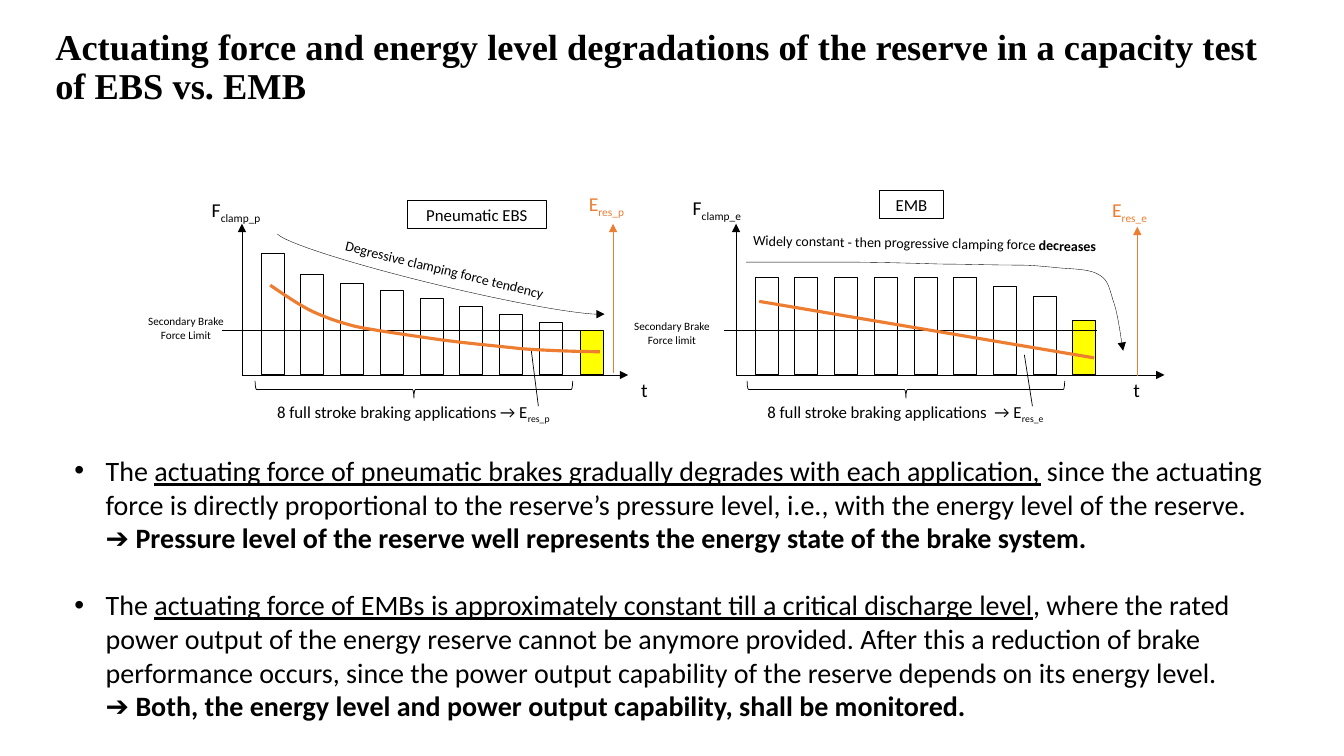
"""Builds the slide comparing reserve degradation of pneumatic EBS and EMB brakes."""
from lxml.etree import SubElement
from pptx import Presentation
from pptx.dml.color import RGBColor
from pptx.enum.shapes import MSO_CONNECTOR, MSO_SHAPE
from pptx.enum.text import PP_ALIGN
from pptx.oxml.ns import qn
from pptx.util import Pt

PX = 9144
COLORS = {"black": "000000", "white": "FFFFFF", "yellow": "FFFF00", "orange": "ED7D31"}

presentation = Presentation()
presentation.slide_width = 1333 * PX
presentation.slide_height = 750 * PX
slide = presentation.slides.add_slide(presentation.slide_layouts[6])
shapes = slide.shapes


def style_line(shape, width, color="black", arrow=None):
    shape.line.color.rgb = RGBColor.from_string(COLORS[color])
    shape.line.width = Pt(width)
    if arrow:
        SubElement(shape.line._ln, qn(f"a:{arrow}")).set("type", "triangle")
    SubElement(shape._element.spPr, qn("a:effectLst"))


def add_text(box, paragraphs, size, color="black", align=PP_ALIGN.LEFT, font="Calibri", inset=(8, 4)):
    shape = shapes.add_textbox(*[value * PX for value in box])
    frame = shape.text_frame
    frame.word_wrap = True
    frame.margin_left = frame.margin_right = inset[0] * PX
    frame.margin_top = frame.margin_bottom = inset[1] * PX
    for index, runs in enumerate(paragraphs):
        paragraph = frame.add_paragraph() if index else frame.paragraphs[0]
        paragraph.alignment = align
        for text, style in runs:
            if style == "break":
                paragraph.add_line_break()
            run = paragraph.add_run()
            run.text = text
            run.font.name = font
            run.font.size = Pt(size)
            run.font.color.rgb = RGBColor.from_string(COLORS[color])
            run.font.bold = style in ("bold", "break")
            run.font.underline = style == "underline"
            if style == "subscript":
                run._r.get_or_add_rPr().set("baseline", "-25000")
    return shape


title = "Actuating force and energy level degradations of the reserve in a capacity test of EBS vs. EMB"
add_text((45, 29, 1244, 118), [[(title, "bold")]], 26, font="Times New Roman",
         inset=(10, 0)).text_frame.paragraphs[0].line_spacing = 0.9

charts = [
    {"name": "Pneumatic EBS", "name_box": (404, 199, 138, 28), "suffix": "p",
     "bars_left": 259, "bar_tops": [252, 272, 281, 288, 296, 304, 312, 320],
     "last_bar": (576, 328), "axis": (240, 623), "energy_axis": (608, 370, 222),
     "force_box": (202, 192, 79, 32), "energy_box": (576, 186, 79, 32), "time_left": 628,
     "limit": (220, 597), "limit_text": "Secondary Brake Force Limit", "limit_box": (133, 308, 103, 35),
     "brace_left": 402, "caption": "8 full stroke braking applications → E", "caption_left": 244,
     "pointer": (527, 348, 534, 403)},
    {"name": "EMB", "name_box": (872, 189, 64, 28), "suffix": "e",
     "bars_left": 749, "bar_tops": [275] * 6 + [284, 294],
     "last_bar": (1064, 318), "axis": (730, 1155), "energy_axis": (1128, 373, 225),
     "force_box": (679, 190, 85, 32), "energy_box": (1095, 192, 79, 32), "time_left": 1116,
     "limit": (718, 1088), "limit_text": "Secondary Brake Force limit", "limit_box": (619, 313, 95, 35),
     "brace_left": 890, "caption": "8 full stroke braking applications  → E", "caption_left": 732,
     "pointer": (1016, 352, 1024, 403)},
]
BASE, BAR_WIDTH, BAR_STEP, LIMIT = 372, 23, 39.4, 328

for chart in charts:
    bars = [(round(chart["bars_left"] + index * BAR_STEP), top, "white")
            for index, top in enumerate(chart["bar_tops"])]
    for left, top, color in [(*chart["last_bar"], "yellow")] + bars:
        bar = shapes.add_shape(MSO_SHAPE.RECTANGLE, left * PX, top * PX, BAR_WIDTH * PX, (BASE - top) * PX)
        bar.fill.solid()
        bar.fill.fore_color.rgb = RGBColor.from_string(COLORS[color])
        style_line(bar, 0.75)

    axis_left, axis_right = chart["axis"]
    energy_x, energy_bottom, energy_top = chart["energy_axis"]
    limit_left, limit_right = chart["limit"]
    for ends, width, color, arrow in [
        ((axis_left, BASE, axis_left, 222), 0.5, "black", "tailEnd"),
        ((axis_left, BASE, axis_right, BASE), 0.5, "black", "tailEnd"),
        ((energy_x, energy_bottom, energy_x, energy_top), 0.5, "orange", "tailEnd"),
        ((limit_left, LIMIT, limit_right, LIMIT), 0.25, "black", None),
        (chart["pointer"], 0.5, "black", None),
    ]:
        line = shapes.add_connector(MSO_CONNECTOR.STRAIGHT, *[value * PX for value in ends])
        style_line(line, width, color, arrow)

    brace = shapes.add_shape(MSO_SHAPE.RIGHT_BRACE, chart["brace_left"] * PX, 229 * PX, 17 * PX, 315 * PX)
    brace.rotation = 90
    brace.fill.background()
    style_line(brace, 0.5)

    suffix = chart["suffix"]
    energy_name = (f"res_{suffix}", "subscript")
    style_line(add_text(chart["name_box"], [[(chart["name"], "")]], 12, align=PP_ALIGN.CENTER), 0.75)
    add_text(chart["force_box"], [[("F", ""), (f"clamp_{suffix}", "subscript")]], 14)
    add_text(chart["energy_box"], [[("E", ""), energy_name]], 14, "orange")
    add_text((chart["time_left"], 371, 19, 32), [[("t", "")]], 14)
    add_text(chart["limit_box"], [[(chart["limit_text"], "")]], 8, align=PP_ALIGN.CENTER)
    add_text((chart["caption_left"], 394, 332, 28), [[(chart["caption"], ""), energy_name]], 12,
             align=PP_ALIGN.CENTER)

tendency = add_text((275, 255, 332, 25), [[("Degressive clamping force tendency", "")]], 10,
                    align=PP_ALIGN.CENTER)
tendency.rotation = 13.7
constancy = add_text((739, 229, 369, 25),
                     [[("Widely constant - then progressive clamping force ", ""), ("decreases", "bold")]], 10)
constancy.rotation = 1

tendency_arc = shapes.add_shape(MSO_SHAPE.ARC, 426 * PX, 100 * PX, 27 * PX, 340 * PX)
tendency_arc.adjustments[0] = 162.645
tendency_arc.adjustments[1] = 53.664
tendency_arc.rotation = 103.5
tendency_arc.fill.background()
style_line(tendency_arc, 0.25, arrow="headEnd")

force_curve = [(740, 260), (773, 260), (805, 260), (838, 260), (871, 260), (934, 262), (934, 262),
               (959, 262), (983, 263), (1008, 263), (1026, 263), (1029, 264), (1043, 265),
               (1057, 267), (1079, 266), (1089, 272), (1099, 277), (1100, 285), (1104, 298),
               (1109, 311), (1112, 338), (1114, 348)]
energy_curve = [(268, 283), (283, 293), (297, 303), (312, 310), (326, 316), (334, 319), (353, 324),
                (373, 328), (402, 332), (429, 336), (456, 340), (490, 343), (517, 346),
                (545, 348), (577, 349), (595, 349)]
STEPS = 10
for controls, width, color, arrow in [(force_curve, 0.25, "black", "tailEnd"),
                                      (energy_curve, 2.25, "orange", None)]:
    points = []
    for start in range(0, len(controls) - 1, 3):
        for step in range(1, STEPS + 1):
            t = step / STEPS
            weights = ((1 - t) ** 3, 3 * t * (1 - t) ** 2, 3 * t * t * (1 - t), t ** 3)
            points.append([sum(weight * point[axis] for weight, point in zip(weights, controls[start:start + 4])) * PX
                           for axis in (0, 1)])
    builder = shapes.build_freeform(controls[0][0] * PX, controls[0][1] * PX)
    builder.add_line_segments(points, close=False)
    curve = builder.convert_to_shape()
    curve.fill.background()
    style_line(curve, width, color, arrow)

energy_line = shapes.add_connector(MSO_CONNECTOR.STRAIGHT, 753 * PX, 299 * PX, 1085 * PX, 355 * PX)
style_line(energy_line, 2.25, "orange")

findings = add_text((64, 445, 1231, 279), [
    [("The ", ""),
     ("actuating force of pneumatic brakes gradually degrades with each application,", "underline"),
     (" since the actuating force is directly proportional to the reserve’s pressure level, i.e., "
      "with the energy level of the reserve.", ""),
     ("➔ Pressure level of the reserve well represents the energy state of the brake system.", "break")],
    [("The ", ""),
     ("actuating force of EMBs is approximately constant till a critical discharge level", "underline"),
     (", where the rated power output of the energy reserve cannot be anymore provided. After this a "
      "reduction of brake performance occurs, since the power output capability of the reserve depends "
      "on its energy level.", ""),
     ("➔ Both, the energy level and power output capability, shall be monitored.", "break")],
], 20, inset=(10, 5))
for index, paragraph in enumerate(findings.text_frame.paragraphs):
    if index:
        paragraph.space_before = Pt(24)
    properties = paragraph._p.get_or_add_pPr()
    properties.set("marL", str(31 * PX))
    properties.set("indent", str(-31 * PX))
    SubElement(properties, qn("a:buFont")).set("typeface", "Arial")
    SubElement(properties, qn("a:buChar")).set("char", "•")

presentation.save("out.pptx")
